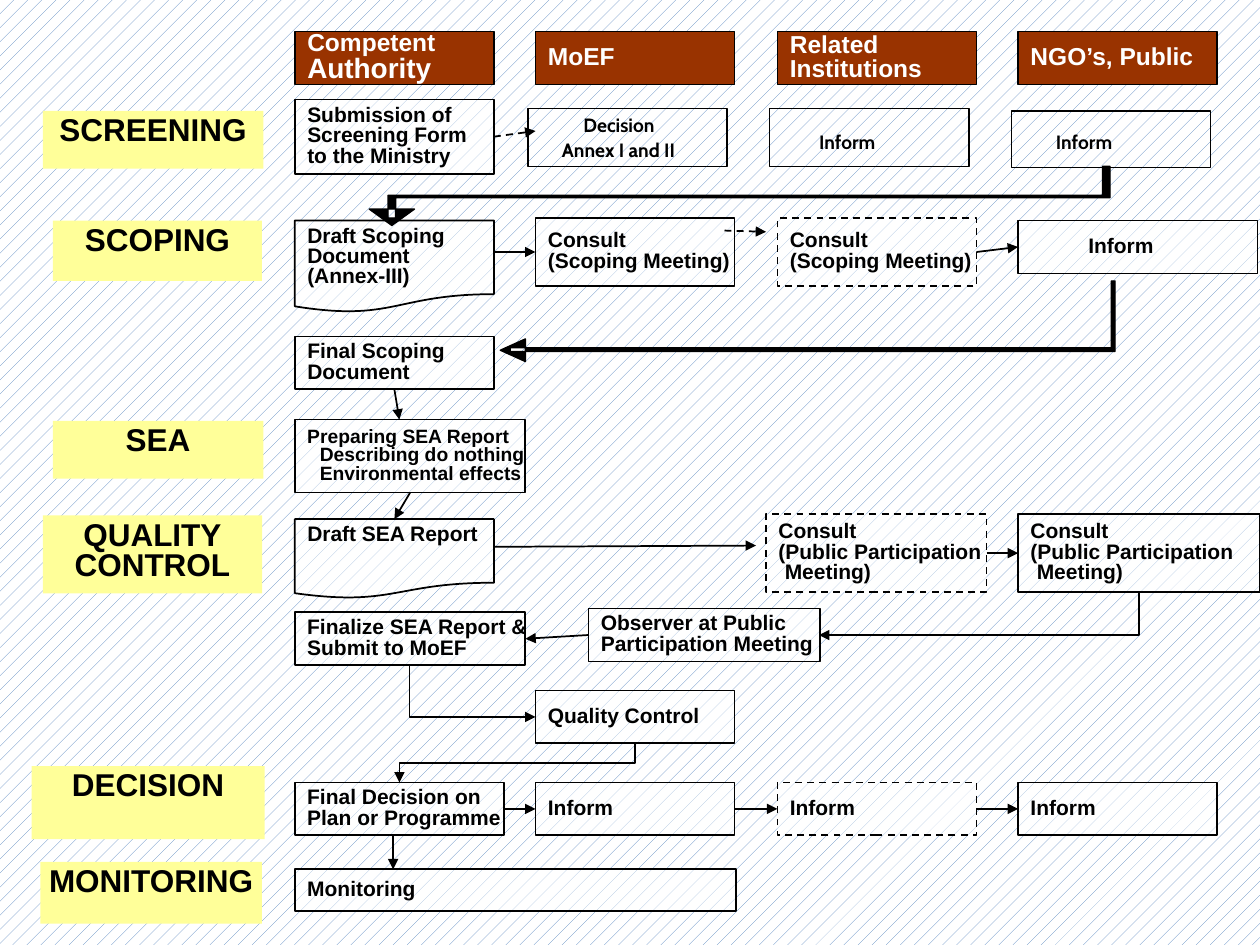
from pptx import Presentation
from pptx import util as u
from pptx.dml.color import RGBColor
from pptx.enum import dml, shapes, text
from pptx.oxml.ns import qn
from lxml import etree

THEME = {
    "ink": "000000", "paper": "FFFFFF", "stage": "FFFF99", "actor": "993300",
    "hatch": "4F81BD", "font": "Arial", "note_font": "Cabin",
    "stage_size": 18, "actor_size": 14, "step_size": 12, "note_size": 11,
    "spacing": 0.81, "alpha": 50000, "thin": 0.75, "line": 1,
}

# Content: grid columns (left edges) and the usual box size
COLS = [2.34, 4.25, 6.17, 8.08]
W, H = 1.58, 0.42

# Stage labels: left, top, width, height, lines
STAGES = [
    (0.42, 1.75, 1.66, 0.48, ["SCOPING"]),
    (0.34, 0.88, 1.75, 0.46, ["SCREENING"]),
    (0.42, 3.34, 1.67, 0.46, ["SEA"]),
    (0.34, 4.09, 1.74, 0.62, ["QUALITY", "CONTROL"]),
    (0.25, 6.08, 1.85, 0.58, ["DECISION"]),
    (0.32, 6.84, 1.76, 0.49, ["MONITORING"]),
]
# Actors, one a column: lines, size of the last line
ACTORS = [(["Competent", "Authority"], 16), (["MoEF"], 14),
          (["Related", "Institutions"], 14), (["NGO’s, Public"], 14)]

SCOPE = ["Consult", "(Scoping Meeting)"]
PUBLIC = ["Consult", "(Public Participation", "Meeting)"]
# Steps: name -> column, top, lines, what differs from the usual box
STEPS = {
    "submit": (0, 0.79, ["Submission of Screening Form to the Ministry"], {"h": 0.59, "wrap": True}),
    "draft scope": (0, 1.75, ["Draft Scoping Document", "(Annex-III)"],
                    {"h": 0.73, "wrap": True, "doc": True}),
    "consult moef": (1, 1.73, SCOPE, {"h": 0.54}),
    "consult related": (2, 1.73, SCOPE, {"h": 0.54, "dash": True}),
    "inform scope": (3, 1.75, ["Inform"], {"w": 1.9, "indents": [0.46]}),
    "final scope": (0, 2.67, ["Final Scoping", "Document"], {}),
    "prepare": (0, 3.33, ["Preparing SEA Report", "Describing do nothing", "Environmental effects"],
                {"w": 1.83, "h": 0.58, "size": 11, "indents": [0, 0.1, 0.1]}),
    "draft sea": (0, 4.12, ["Draft SEA Report"],
                  {"h": 0.63, "wrap": True, "doc": True, "top": True}),
    "meet related": (2, 4.08, PUBLIC, {"x": 6.08, "w": 1.75, "h": 0.62, "dash": True,
                                       "indents": [0, 0, 0.05]}),
    "meet public": (3, 4.08, PUBLIC, {"w": 1.92, "h": 0.62, "indents": [0, 0, 0.05]}),
    "finalize": (0, 4.86, ["Finalize SEA Report &", "Submit to MoEF"], {"w": 1.83}),
    "observer": (1, 4.83, ["Observer at Public", "Participation Meeting"], {"x": 4.67, "w": 1.84}),
    "quality": (1, 5.48, ["Quality Control"], {}),
    "decision": (0, 6.21, ["Final Decision on", "Plan or Programme"], {"w": 1.66}),
    "inform moef": (1, 6.21, ["Inform"], {}),
    "inform related": (2, 6.21, ["Inform"], {"dash": True}),
    "inform public": (3, 6.21, ["Inform"], {}),
    "monitor": (0, 6.9, ["Monitoring"], {"w": 3.5, "h": 0.33}),
}
# Screening boxes: left, top, height, line width
OUTLINES = [(4.19, 0.86, 0.46, 0.75), (6.11, 0.86, 0.46, 0.75), (8.03, 0.88, 0.45, 0)]
NOTES = [(4.63, 0.9, 0.66, "Decision"), (4.46, 1.1, 1.14, "Annex I and II"),
         (6.5, 1.03, 0.78, "Inform"), (8.38, 1.03, 0.54, "Inform")]

# Straight arrows: each end is a point or (step, side)
TOP, LEFT, BOTTOM, RIGHT = range(4)
ARROWS = [
    (("submit", RIGHT), (4.25, 1.04), True),
    ((5.75, 1.83), (6.08, 1.84), True),
    ((3.92, 2.0), ("consult moef", LEFT), False),
    (("consult related", RIGHT), ("inform scope", LEFT), False),
    (("final scope", BOTTOM), (3.17, 3.33), False),
    (("prepare", BOTTOM), ("draft sea", TOP), False),
    ((3.92, 4.34), (6.0, 4.33), False),
    (("meet related", RIGHT), ("meet public", LEFT), False),
    (("observer", LEFT), ("finalize", RIGHT), False),
    (("decision", RIGHT), ("inform moef", LEFT), False),
    (("inform moef", RIGHT), ("inform related", LEFT), False),
    (("inform related", RIGHT), ("inform public", LEFT), False),
    ((3.12, 6.62), (3.12, 6.9), False),
]
# Elbows that leave downwards: start, end, preset
ELBOWS = [((9.04, 4.7), (6.5, 5.04), "bentConnector2"),
          ((3.25, 5.28), (4.25, 5.69), "bentConnector2"),
          ((5.04, 5.9), (3.17, 6.21), "bentConnector3")]
# Heavy return arrows: bar outline, then head
RETURNS = [
    [[(8.81, 1.32), (8.81, 1.57), (3.11, 1.57), (3.14, 1.56), (3.14, 1.73), (3.08, 1.73),
      (3.08, 1.55), (8.78, 1.55), (8.75, 1.56), (8.75, 1.32)],
     [(3.29, 1.66), (3.11, 1.79), (2.93, 1.66)]],
    [[(8.85, 2.23), (8.85, 2.79), (4.05, 2.79), (4.05, 2.76), (8.84, 2.76), (8.82, 2.78),
      (8.82, 2.23)],
     [(4.17, 2.87), (3.97, 2.78), (4.17, 2.69)]],
]


def rgb(name):
    return RGBColor.from_string(THEME[name])


def inches(*values):
    return [u.Inches(v) for v in values]


def paint(sp, fill, width=None, dash=False):
    sp.shadow.inherit = False
    if fill:
        sp.fill.solid()
        sp.fill.fore_color.rgb = rgb(fill)
    else:
        sp.fill.background()
    if width is None:
        sp.line.fill.background()
    else:
        stroke(sp.line, width, dash)


def stroke(line, width, dash=False):
    line.color.rgb = rgb("ink")
    line.width = u.Pt(width)
    if dash:
        line.dash_style = dml.MSO_LINE.DASH


def write(sp, lines, sizes, color="ink", font="font", spacing=THEME["spacing"],
          align=text.PP_ALIGN.LEFT, indents=(), **frame):
    tf = sp.text_frame
    for name, value in {"word_wrap": False, **frame}.items():
        setattr(tf, name, value)
    for i, line in enumerate(lines):
        p = tf.add_paragraph() if i else tf.paragraphs[0]
        p.alignment, p.line_spacing = align, spacing
        if i < len(indents) and indents[i]:
            p._p.get_or_add_pPr().set("marL", str(u.Inches(indents[i])))
        r = p.add_run()
        r.text = line
        style = {"name": THEME[font], "size": u.Pt(sizes[i]), "bold": True}
        for name, value in style.items():
            setattr(r.font, name, value)
        r.font.color.rgb = rgb(color)


def finish_arrow(c, dash=False):
    stroke(c.line, THEME["line"], dash)
    etree.SubElement(c.line._get_or_add_ln(), qn("a:tailEnd"), type="triangle")
    etree.SubElement(c._element.spPr, qn("a:effectLst"))


prs = Presentation()
prs.slide_width, prs.slide_height = inches(10, 7.5)
s = prs.slides.add_slide(prs.slide_layouts[6])
bg = s.background.fill
bg.patterned()
bg.pattern = dml.MSO_PATTERN.PERCENT_10
bg.fore_color.rgb, bg.back_color.rgb = rgb("hatch"), rgb("paper")
RECT = shapes.MSO_SHAPE.RECTANGLE
MIDDLE = text.MSO_ANCHOR.MIDDLE

# Stages and actors
for *box, lines in STAGES:
    sp = s.shapes.add_shape(RECT, *inches(*box))
    paint(sp, "stage")
    write(sp, lines, [THEME["stage_size"]] * len(lines), align=text.PP_ALIGN.CENTER,
          vertical_anchor=text.MSO_ANCHOR.TOP)
for x, (lines, last) in zip(COLS, ACTORS):
    sp = s.shapes.add_shape(RECT, *inches(x, 0.25, W, H))
    paint(sp, "actor", THEME["thin"])
    sizes = [THEME["actor_size"]] * (len(lines) - 1) + [last]
    write(sp, lines, sizes, "paper", vertical_anchor=MIDDLE)

# Steps
boxes = {}
for name, (col, top, lines, o) in STEPS.items():
    kind = shapes.MSO_SHAPE.FLOWCHART_DOCUMENT if o.get("doc") else RECT
    sp = s.shapes.add_shape(kind, *inches(o.get("x", COLS[col]), top, o.get("w", W), o.get("h", H)))
    paint(sp, "paper", THEME["line"], o.get("dash"))
    color = sp._element.spPr.find(qn("a:solidFill"))[0]
    etree.SubElement(color, qn("a:alpha"), val=str(THEME["alpha"]))
    write(sp, lines, [o.get("size", THEME["step_size"])] * len(lines),
          indents=o.get("indents", ()), word_wrap=o.get("wrap", False),
          vertical_anchor=text.MSO_ANCHOR.TOP if o.get("top") else MIDDLE)
    boxes[name] = sp

# Screening row
for x, y, h, width in OUTLINES:
    paint(s.shapes.add_shape(RECT, *inches(x, y, W, h)), None, width)
for x, y, w, line in NOTES:
    write(s.shapes.add_textbox(*inches(x, y, w, 0.19)), [line], [THEME["note_size"]],
          font="note_font", spacing=1.0,
          margin_left=0, margin_right=0, margin_top=0, margin_bottom=0)

# Straight arrows
for start, end, dash in ARROWS:
    points = [(0, 0) if isinstance(e[0], str) else e for e in (start, end)]
    c = s.shapes.add_connector(shapes.MSO_CONNECTOR.STRAIGHT, *inches(*points[0], *points[1]))
    for e, join in ((start, c.begin_connect), (end, c.end_connect)):
        if isinstance(e[0], str):
            join(boxes[e[0]], e[1])
    finish_arrow(c, dash)

# Elbows: a box turned a quarter about its centre
for (x1, y1), (x2, y2), preset in ELBOWS:
    cx, cy, w, h = (x1 + x2) / 2, (y1 + y2) / 2, abs(y2 - y1), abs(x2 - x1)
    c = s.shapes.add_connector(shapes.MSO_CONNECTOR.ELBOW,
                               *inches(cx - w / 2, cy - h / 2, cx + w / 2, cy + h / 2))
    spPr = c._element.spPr
    spPr.find(qn("a:prstGeom")).set("prst", preset)
    xfrm = spPr.find(qn("a:xfrm"))
    xfrm.set("rot", str((90 if x2 < x1 else 270) * 60000))
    if x2 > x1:
        xfrm.set("flipH", "1")
    finish_arrow(c)

# Heavy return arrows
for bar, head in RETURNS:
    fb = s.shapes.build_freeform(*inches(*bar[0]))
    fb.add_line_segments([inches(*pt) for pt in bar[1:]], close=True)
    fb.move_to(*inches(*head[0]))
    fb.add_line_segments([inches(*pt) for pt in head[1:]], close=True)
    paint(fb.convert_to_shape(), "ink", 0)

prs.save("out.pptx")
